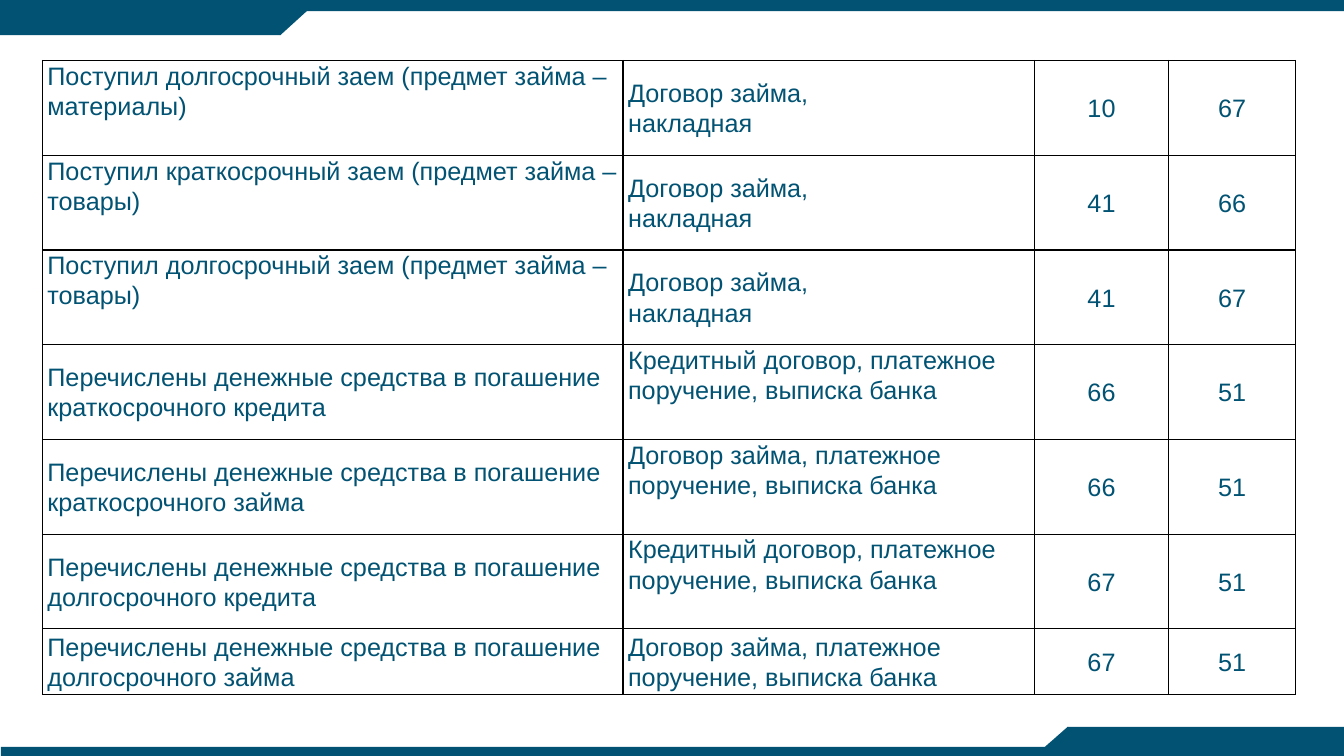
from dataclasses import dataclass

from lxml.etree import SubElement
from pptx import Presentation
from pptx.dml.color import RGBColor
from pptx.enum.shapes import MSO_SHAPE
from pptx.enum.text import MSO_ANCHOR, PP_ALIGN
from pptx.oxml.ns import qn
from pptx.slide import Slide
from pptx.table import _Cell
from pptx.util import Inches, Pt

TEAL = "025373"
BLACK = "000000"


@dataclass
class Band:
    left: float
    top: float
    width: float
    height: float
    shape: MSO_SHAPE = MSO_SHAPE.RECTANGLE
    rotation: int = 0


@dataclass
class Entry:
    operation: str
    document: str
    debit: str
    credit: str
    operation_anchor: MSO_ANCHOR = MSO_ANCHOR.MIDDLE
    document_anchor: MSO_ANCHOR = MSO_ANCHOR.MIDDLE


BANDS = [
    Band(0, 0, 13.33, 0.11),
    Band(0.01, 7.41, 13.32, 0.09),
    Band(0, 0.05, 2.78, 0.3),
    Band(2.45, 0.05, 0.66, 0.3, MSO_SHAPE.FLOWCHART_MERGE),
    Band(10.59, 7.21, 2.74, 0.29),
    Band(10.26, 7.21, 0.66, 0.29, MSO_SHAPE.FLOWCHART_MERGE, 180),
]

TOP = MSO_ANCHOR.TOP
RECEIVED = "Поступил {} заем (предмет займа – {})"
REPAID = "Перечислены денежные средства в погашение {}"
INVOICE = "Договор займа,\nнакладная"
PAYMENT = "{} договор, платежное поручение, выписка банка".format("Кредитный")
LOAN_PAYMENT = "Договор займа, платежное поручение, выписка банка"

ENTRIES = [
    Entry(RECEIVED.format("долгосрочный", "материалы"), INVOICE, "10", "67", operation_anchor=TOP),
    Entry(RECEIVED.format("краткосрочный", "товары"), INVOICE, "41", "66", operation_anchor=TOP),
    Entry(RECEIVED.format("долгосрочный", "товары"), INVOICE, "41", "67", operation_anchor=TOP),
    Entry(REPAID.format("краткосрочного кредита"), PAYMENT, "66", "51", document_anchor=TOP),
    Entry(REPAID.format("краткосрочного займа"), LOAN_PAYMENT, "66", "51", document_anchor=TOP),
    Entry(REPAID.format("долгосрочного кредита"), PAYMENT, "67", "51", document_anchor=TOP),
    Entry(REPAID.format("долгосрочного займа"), LOAN_PAYMENT, "67", "51"),
]
COLUMN_WIDTHS = [5.76, 4.08, 1.33, 1.26]
ROW_HEIGHTS = [0.94] * 6 + [0.65]


def rgb(value: str) -> RGBColor:
    return RGBColor.from_string(value)


def draw_band(s: Slide, band: Band) -> None:
    sp = s.shapes.add_shape(band.shape, Inches(band.left), Inches(band.top),
                            Inches(band.width), Inches(band.height))
    sp.rotation = band.rotation
    sp.shadow.inherit = False
    sp.fill.solid()
    sp.fill.fore_color.rgb = rgb(TEAL)
    sp.line.fill.background()


def set_borders(cell: _Cell, color: str, width: float) -> None:
    properties = cell._tc.get_or_add_tcPr()
    # Borders come before the fill in the cell properties
    for i, side in enumerate(("lnL", "lnR", "lnT", "lnB")):
        line = SubElement(properties, qn(f"a:{side}"), w=str(Pt(width)))
        fill = SubElement(line, qn("a:solidFill"))
        SubElement(fill, qn("a:srgbClr"), val=color)
        properties.insert(i, line)


def fill_cell(cell: _Cell, text: str, anchor: MSO_ANCHOR, align: PP_ALIGN) -> None:
    cell.margin_left = cell.margin_right = Inches(0.05)
    cell.margin_top = cell.margin_bottom = 0
    cell.vertical_anchor = anchor
    cell.fill.background()
    set_borders(cell, BLACK, 1)
    cell.text_frame.text = text
    for p in cell.text_frame.paragraphs:
        p.alignment = align
        p.line_spacing = 1.07
        for r in p.runs:
            r.font.name = "Arial"
            r.font.size = Pt(18)
            r.font.color.rgb = rgb(TEAL)


def draw_entries(s: Slide, entries: list[Entry]) -> None:
    frame = s.shapes.add_table(len(entries), len(COLUMN_WIDTHS), Inches(0.42), Inches(0.6),
                               Inches(sum(COLUMN_WIDTHS)), Inches(sum(ROW_HEIGHTS)))
    table = frame.table
    table.first_row = table.horz_banding = False
    for column, width in zip(table.columns, COLUMN_WIDTHS):
        column.width = Inches(width)
    for row, height, entry in zip(table.rows, ROW_HEIGHTS, entries):
        row.height = Inches(height)
        operation, document, debit, credit = row.cells
        fill_cell(operation, entry.operation, entry.operation_anchor, PP_ALIGN.LEFT)
        fill_cell(document, entry.document, entry.document_anchor, PP_ALIGN.LEFT)
        fill_cell(debit, entry.debit, MSO_ANCHOR.MIDDLE, PP_ALIGN.CENTER)
        fill_cell(credit, entry.credit, MSO_ANCHOR.MIDDLE, PP_ALIGN.CENTER)


def main() -> None:
    prs = Presentation()
    prs.slide_width, prs.slide_height = Inches(13.33), Inches(7.5)
    s = prs.slides.add_slide(prs.slide_layouts[6])

    # Corner and edge bands
    for band in BANDS:
        draw_band(s, band)

    # Table of accounting entries
    draw_entries(s, ENTRIES)

    prs.save("out.pptx")


if __name__ == "__main__":
    main()
